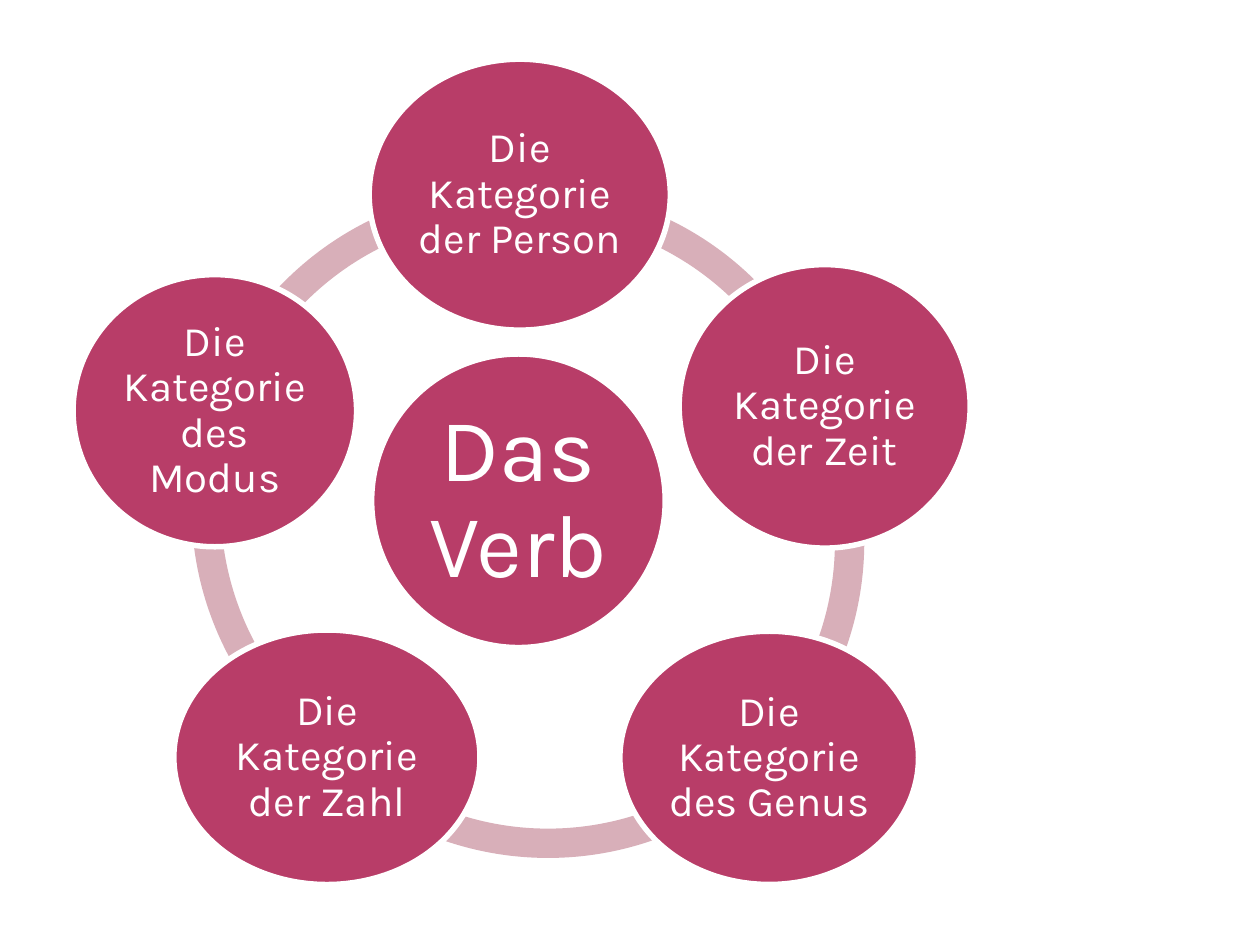
import pptx
import pptx.dml.color
import pptx.enum.shapes
import pptx.enum.text
import pptx.util

ROSE = pptx.dml.color.RGBColor(0xB8, 0x3D, 0x68)
PINK = pptx.dml.color.RGBColor(0xD8, 0xAF, 0xB9)
WHITE = pptx.dml.color.RGBColor(0xFF, 0xFF, 0xFF)
KIND = pptx.enum.shapes.MSO_SHAPE
FONT = "Karla"
COLS, ROWS = 100, 75
WIDE, HIGH = pptx.util.Inches(10), pptx.util.Inches(7.5)
RING = 50.6
BAND = 0.046

ARCS = [
    (15.2, 14.9, 197.98, 271.61),
    (15.2, 14.9, 126, 198),
    (18.2, 17.5, 44.82, 135.18),
    (18, 17.7, 334.15, 43.98),
    (16.8, 14.9, 267.95, 341.29),
]
DISCS = [
    (29.3, 4.7, 23.9, 21.5, "der Person"),
    (53.9, 21, 23.1, 22.5, "der Zeit"),
    (49.2, 50.1, 23.7, 20.1, "des Genus"),
    (13.8, 50, 24.3, 20.2, "der Zahl"),
    (5.8, 21.8, 22.5, 21.6, "des Modus"),
]


def add_shape(slide, kind, col, row, wide, high, fill):
    shape = slide.shapes.add_shape(
        kind,
        round(WIDE * col / COLS),
        round(HIGH * row / ROWS),
        round(WIDE * wide / COLS),
        round(HIGH * high / ROWS),
    )
    shape.shadow.inherit = False
    shape.fill.solid()
    shape.fill.fore_color.rgb = fill
    return shape


def add_arc(slide, col, row, start, end):
    arc = add_shape(slide, KIND.BLOCK_ARC, col, row, RING, RING, PINK)
    arc.line.fill.background()
    arc.adjustments[0] = start * 0.6
    arc.adjustments[1] = end * 0.6
    arc.adjustments[2] = BAND


def add_disc(slide, col, row, wide, high, text, size, inset):
    disc = add_shape(slide, KIND.OVAL, col, row, wide, high, ROSE)
    disc.line.color.rgb = WHITE
    disc.line.width = pptx.util.Pt(3.15)
    frame = disc.text_frame
    frame.word_wrap = True
    frame.vertical_anchor = pptx.enum.text.MSO_ANCHOR.MIDDLE
    for side in ("left", "top", "right", "bottom"):
        setattr(frame, f"margin_{side}", pptx.util.Inches(inset))
    para = frame.paragraphs[0]
    para.alignment = pptx.enum.text.PP_ALIGN.CENTER
    para.line_spacing = 0.9
    run = para.add_run()
    run.text = text
    run.font.name = FONT
    run.font.size = pptx.util.Pt(size)
    run.font.color.rgb = WHITE


def main():
    deck = pptx.Presentation()
    deck.slide_width, deck.slide_height = WIDE, HIGH
    slide = deck.slides.add_slide(deck.slide_layouts[6])
    for arc in ARCS:
        add_arc(slide, *arc)
    add_disc(slide, 29.5, 28.1, 23.3, 23.3, "Das Verb", 51, 0.07)
    for *place, name in DISCS:
        add_disc(slide, *place, f"Die Kategorie {name}", 24, 0.03)
    deck.save("out.pptx")


if __name__ == "__main__":
    main()
